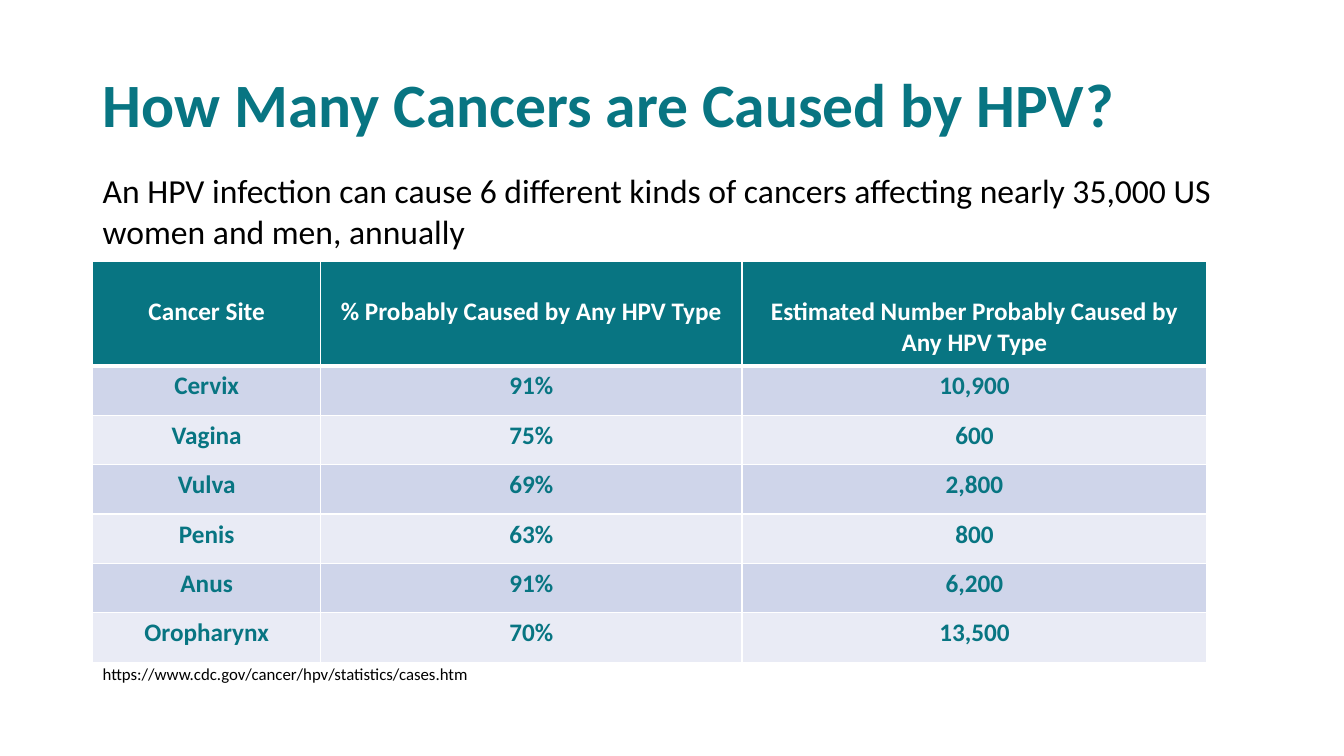
from lxml.etree import SubElement
from pptx import Presentation
from pptx.dml.color import RGBColor
from pptx.enum.text import MSO_ANCHOR as Anchor, PP_ALIGN as Align
from pptx.oxml.ns import qn
from pptx.util import Inches, Pt

TEAL = RGBColor(0x08, 0x75, 0x82)
WHITE = RGBColor(0xFF, 0xFF, 0xFF)
BLACK = RGBColor(0x00, 0x00, 0x00)
BAND_DARK = RGBColor(0xCF, 0xD5, 0xEA)
BAND_LIGHT = RGBColor(0xE9, 0xEB, 0xF5)
FONT = "Calibri"

LEFT = 0.92
COLUMN_WIDTHS = (2.26, 4.18, 4.61)
HEADER_HEIGHT = 1.04
ROW_HEIGHT = 0.49
HEADER = (
    "Cancer Site",
    "% Probably Caused by Any HPV Type",
    "Estimated Number Probably Caused by Any HPV Type",
)
CASES = (
    ("Cervix", "91%", "10,900"),
    ("Vagina", "75%", "600"),
    ("Vulva", "69%", "2,800"),
    ("Penis", "63%", "800"),
    ("Anus", "91%", "6,200"),
    ("Oropharynx", "70%", "13,500"),
)


def add_run(paragraph, text, size, color, bold=False):
    """Add one formatted run to a paragraph."""
    run = paragraph.add_run()
    run.text = text
    run.font.name = FONT
    run.font.size = Pt(size)
    run.font.bold = bold
    run.font.color.rgb = color


def add_text(slide, box, text, size, color, bold=False, wrap=True, anchor=Anchor.TOP):
    """Add a text box at box and return its paragraph."""
    shape = slide.shapes.add_textbox(*(Inches(length) for length in box))
    frame = shape.text_frame
    frame.word_wrap = wrap
    frame.vertical_anchor = anchor
    paragraph = frame.paragraphs[0]
    add_run(paragraph, text, size, color, bold)
    return paragraph


def set_borders(cell, bottom_width):
    """Draw white borders around a cell."""
    properties = cell._tc.get_or_add_tcPr()
    widths = {"a:lnL": 1, "a:lnR": 1, "a:lnT": 1, "a:lnB": bottom_width}
    for tag, width in widths.items():
        line = SubElement(properties, qn(tag), w=str(Pt(width)))
        fill = SubElement(line, qn("a:solidFill"))
        SubElement(fill, qn("a:srgbClr"), val=str(WHITE))


def fill_cell(cell, text, color, background, bottom_width=1):
    """Write centred bold text on a coloured cell."""
    set_borders(cell, bottom_width)
    cell.fill.solid()
    cell.fill.fore_color.rgb = background
    paragraph = cell.text_frame.paragraphs[0]
    paragraph.alignment = Align.CENTER
    add_run(paragraph, text, 18, color, bold=True)


def add_case_table(slide, left, top):
    """Add the table of cancer sites with its corner at left and top."""
    height = HEADER_HEIGHT + ROW_HEIGHT * len(CASES)
    box = (left, top, sum(COLUMN_WIDTHS), height)
    table = slide.shapes.add_table(
        len(CASES) + 1, len(HEADER), *(Inches(length) for length in box)
    ).table
    for column, width in zip(table.columns, COLUMN_WIDTHS):
        column.width = Inches(width)
    for row in table.rows:
        row.height = Inches(ROW_HEIGHT)
    table.rows[0].height = Inches(HEADER_HEIGHT)

    for column, label in enumerate(HEADER):
        cell = table.cell(0, column)
        cell.margin_top = Inches(0.35)
        fill_cell(cell, label, WHITE, TEAL, bottom_width=3)
    for row, case in enumerate(CASES, start=1):
        background = BAND_DARK if row % 2 else BAND_LIGHT
        for column, value in enumerate(case):
            fill_cell(table.cell(row, column), value, TEAL, background)


def add_cancer_slide(presentation):
    """Add the slide with title, introduction, table and web address."""
    slide = presentation.slides.add_slide(presentation.slide_layouts[6])
    title = add_text(
        slide, (LEFT, 0.29, 11.5, 1.56), "How Many Cancers are Caused by HPV?",
        44, TEAL, bold=True, anchor=Anchor.MIDDLE,
    )
    title.line_spacing = 0.9
    add_text(
        slide, (LEFT, 1.64, 11.19, 1.21),
        "An HPV infection can cause 6 different kinds of cancers "
        "affecting nearly 35,000 US women and men, annually",
        24, BLACK,
    )
    add_case_table(slide, LEFT, 2.59)
    add_text(
        slide, (LEFT, 6.54, 3.87, 0.3),
        "https://www.cdc.gov/cancer/hpv/statistics/cases.htm",
        12, BLACK, wrap=False,
    )


def main():
    """Build and save the presentation."""
    presentation = Presentation()
    presentation.slide_width = Inches(13.33)
    presentation.slide_height = Inches(7.5)
    add_cancer_slide(presentation)
    presentation.save("out.pptx")


if __name__ == "__main__":
    main()
